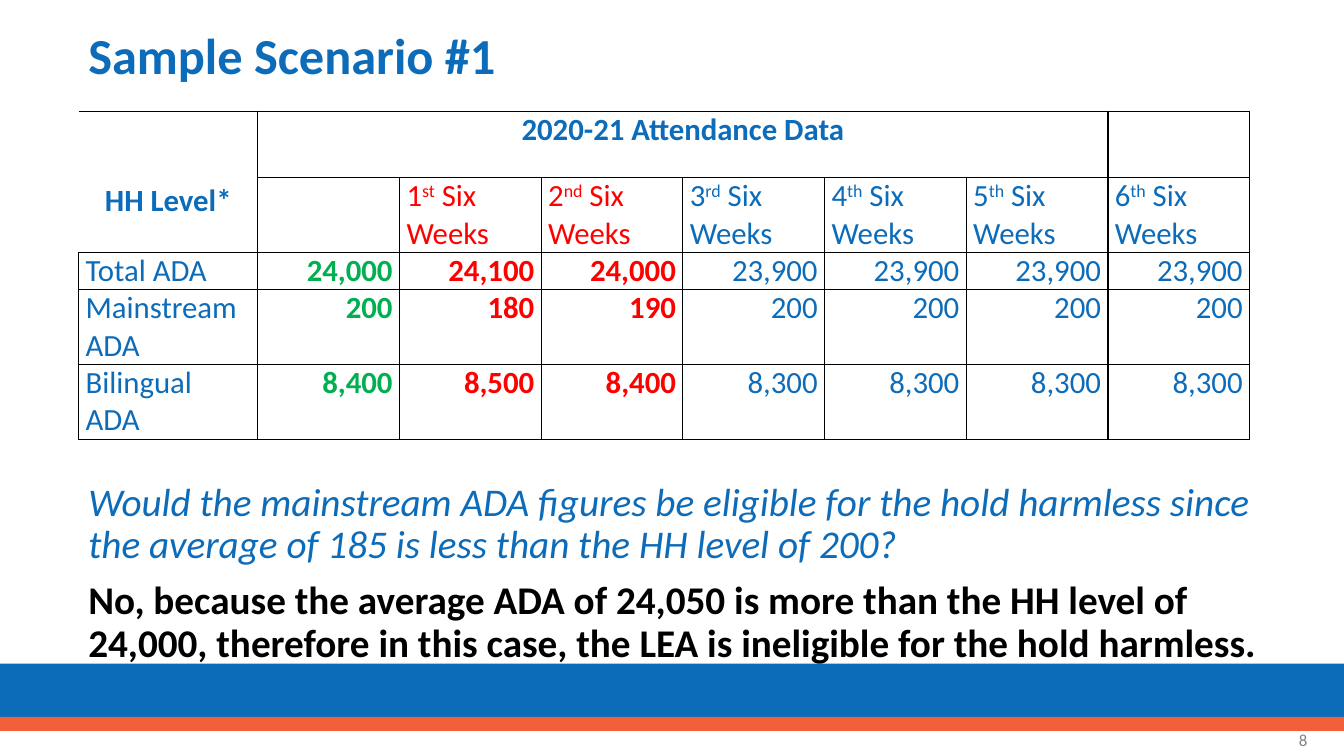
import pptx
import pptx.util
import pptx.dml.color
import pptx.enum.shapes
import pptx.enum.text
import pptx.oxml
import pptx.oxml.ns

Pt = pptx.util.Pt
ALIGN = pptx.enum.text.PP_ALIGN
ANCHOR = pptx.enum.text.MSO_ANCHOR
COLORS = {"blue": "0D6CB9", "orange": "F16038", "red": "FF0000",
          "green": "00B050", "black": "000000", "gray": "808080"}


def write(p, text, size=22, color="blue", bold=False, italic=False,
          align=None, spacing=None, before=0, baseline=0):
    r = p.add_run()
    r.text = text
    r.font.name = "Calibri"
    r.font.size = Pt(size)
    r.font.bold = bold
    r.font.italic = italic
    r.font.color.rgb = pptx.dml.color.RGBColor.from_string(COLORS[color])
    if baseline:
        r.font._element.set("baseline", str(baseline * 1000))
    if align is not None:
        p.alignment = align
    if spacing:
        p.line_spacing = spacing
    p.space_before = Pt(before)


def add_border(cell, side):
    cell._tc.get_or_add_tcPr().append(pptx.oxml.parse_xml(
        f'<a:ln{side} {pptx.oxml.ns.nsdecls("a")} w="12700"><a:solidFill>'
        f'<a:srgbClr val="{COLORS["black"]}"/></a:solidFill></a:ln{side}>'))


prs = pptx.Presentation()
prs.slide_width = Pt(960)
prs.slide_height = Pt(540)
s = prs.slides.add_slide(prs.slide_layouts[6])

for top, height, color in [(474, 41.5, "blue"), (512, 10, "orange")]:
    sp = s.shapes.add_shape(pptx.enum.shapes.MSO_SHAPE.RECTANGLE,
                            0, Pt(top), Pt(960), Pt(height))
    sp.shadow.inherit = False
    sp.fill.solid()
    sp.fill.fore_color.rgb = pptx.dml.color.RGBColor.from_string(COLORS[color])
    sp.line.fill.background()

question = ("Would the mainstream ADA figures be eligible for the hold harmless "
            "since the average of 185 is less than the HH level of 200?")
answer = ("No, because the average ADA of 24,050 is more than the HH level of "
          "24,000, therefore in this case, the LEA is ineligible for the hold harmless.")
boxes = [
    ((56, 12, 876, 59), ANCHOR.MIDDLE,
     [("Sample Scenario #1", dict(size=36, bold=True, spacing=0.9))]),
    ((56, 341, 856, 132), ANCHOR.TOP,
     [(question, dict(size=28, italic=True, spacing=0.9)),
      (answer, dict(size=28, color="black", bold=True, spacing=0.9, before=10))]),
    ((725, 514, 216, 29), ANCHOR.MIDDLE,
     [("8", dict(size=12, color="gray", align=ALIGN.RIGHT))]),
]
for place, anchor, paragraphs in boxes:
    tf = s.shapes.add_textbox(*map(Pt, place)).text_frame
    tf.word_wrap = True
    tf.vertical_anchor = anchor
    for i, (text, fmt) in enumerate(paragraphs):
        p = tf.add_paragraph() if i else tf.paragraphs[0]
        write(p, text, **fmt)

row_heights = [47, 53.5, 26.5, 53.5, 53.5]
col_widths = [128] + [101.2] * 7
table = s.shapes.add_table(5, 8, Pt(56.2), Pt(79.7), Pt(sum(col_widths)),
                           Pt(sum(row_heights))).table
table.first_row = False
table.horz_banding = False
for row, height in zip(table.rows, row_heights):
    row.height = Pt(height)
for column, width in zip(table.columns, col_widths):
    column.width = Pt(width)

for row in range(5):
    for col in range(8):
        cell = table.cell(row, col)
        cell.margin_left = cell.margin_right = Pt(5)
        cell.margin_top = cell.margin_bottom = 0
        for side in "LRTB":
            if side != "L" or col > 0 or row > 1:
                add_border(cell, side)
        cell.fill.background()

level = table.cell(0, 0)
level.merge(table.cell(1, 0))
level.vertical_anchor = ANCHOR.MIDDLE
level.margin_top = Pt(26.5)
write(level.text_frame.paragraphs[0], "HH Level*", bold=True, align=ALIGN.CENTER)

heading = table.cell(0, 1)
heading.merge(table.cell(0, 6))
write(heading.text_frame.paragraphs[0], "2020-21 Attendance Data",
      bold=True, align=ALIGN.CENTER)

for number, suffix in enumerate(["st", "nd", "rd", "th", "th", "th"], 1):
    p = table.cell(1, number + 1).text_frame.paragraphs[0]
    color = "red" if number < 3 else "blue"
    write(p, str(number), color=color)
    write(p, suffix, color=color, baseline=30)
    write(p, " Six Weeks", color=color)

attendance = [
    ("Total ADA", ["24,000", "24,100", "24,000"] + ["23,900"] * 4),
    ("Mainstream ADA", ["200", "180", "190"] + ["200"] * 4),
    ("Bilingual ADA", ["8,400", "8,500", "8,400"] + ["8,300"] * 4),
]
value_colors = ["green", "red", "red"] + ["blue"] * 4
for row, (label, values) in enumerate(attendance, 2):
    write(table.cell(row, 0).text_frame.paragraphs[0], label)
    for col, (value, color) in enumerate(zip(values, value_colors), 1):
        write(table.cell(row, col).text_frame.paragraphs[0], value, color=color,
              bold=color != "blue", align=ALIGN.RIGHT)

prs.save("out.pptx")
